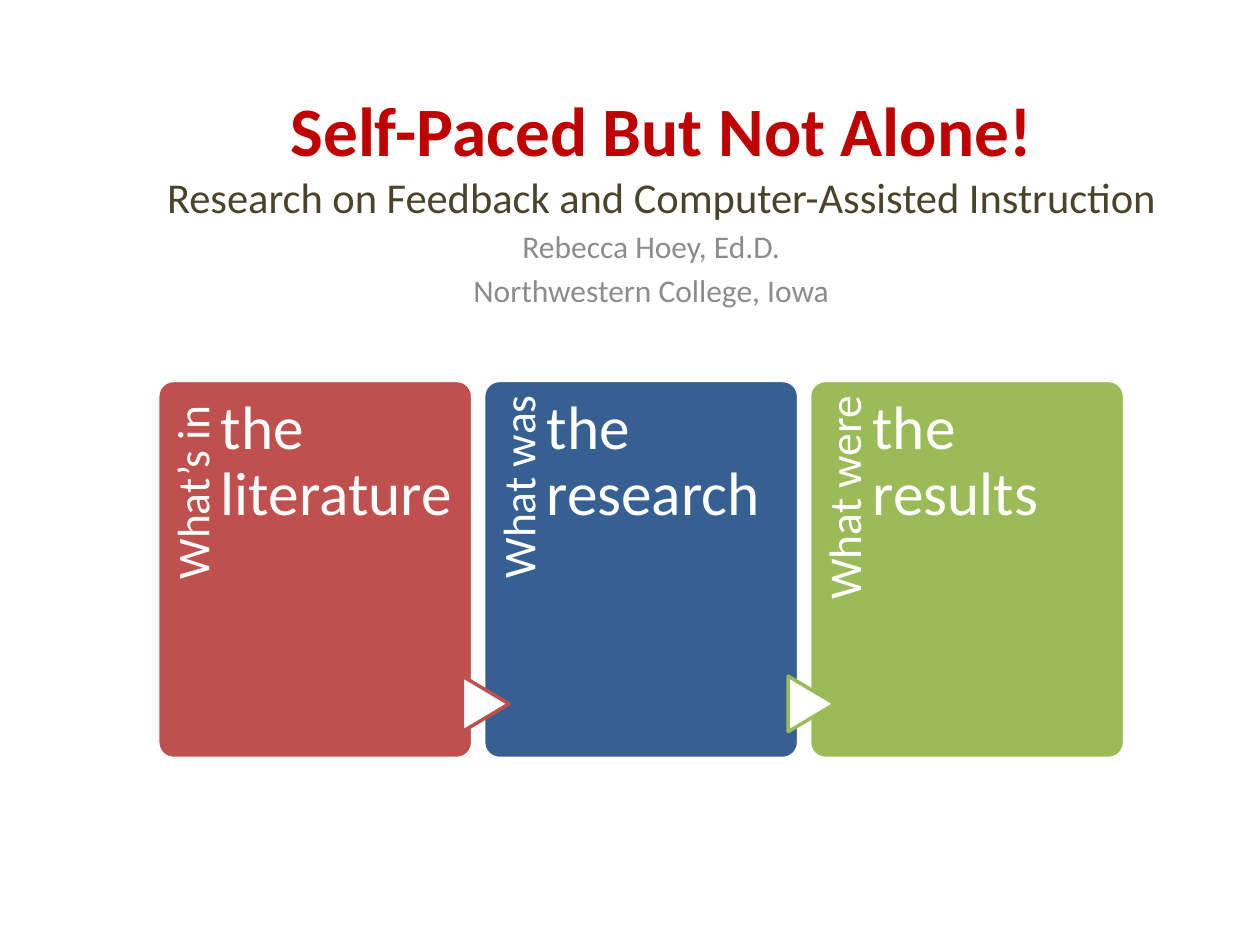
from pptx import Presentation
from pptx import util as u
from pptx.dml.color import RGBColor
from pptx.enum import shapes, text

Cm, Pt = u.Cm, u.Pt
KIND, ALIGN = shapes.MSO_SHAPE, text.PP_ALIGN
WHITE = "FFFFFF"


def color(fmt, hue):
    """Set a solid fill or a font colour from a hex string."""
    target = fmt.fore_color if hasattr(fmt, "fore_color") else fmt.color
    target.rgb = RGBColor.from_string(hue)


def assign(item, form):
    for name, value in form.items():
        setattr(item, name, value)


def shape(slide, kind, box, fill, edge):
    item = slide.shapes.add_shape(kind, *map(Cm, box))
    item.shadow.inherit = False
    item.fill.solid()
    color(item.fill, fill)
    item.line.fill.solid()
    color(item.line.fill, edge)
    item.line.width = Pt(2)
    return item


def textbox(slide, box, paras, frame, para):
    """Each paragraph is a list of (words, size, hue, bold) runs."""
    item = slide.shapes.add_textbox(*map(Cm, box))
    body = item.text_frame
    assign(body, {"word_wrap": True, **frame})
    for i, runs in enumerate(paras):
        line = body.add_paragraph() if i else body.paragraphs[0]
        assign(line, para)
        for j, (words, size, hue, bold) in enumerate(runs):
            if j:
                line.add_line_break()
            run = line.add_run()
            run.text = words
            assign(run.font, {"name": "Calibri", "size": Pt(size), "bold": bold})
            color(run.font, hue)
    return item


def header(slide, left, top):
    # Title with its subject line
    textbox(slide, (left, top, 21.59, 4.09),
            [[("Self-Paced But Not Alone!", 39.6, "C00000", True),
              ("Research on Feedback and Computer-Assisted Instruction",
               24.3, "4A452A", False)]],
            {"vertical_anchor": text.MSO_ANCHOR.MIDDLE},
            {"alignment": ALIGN.CENTER})
    # Author and school
    names = ["Rebecca Hoey, Ed.D.", "Northwestern College, Iowa"]
    textbox(slide, (left + 1.7, top + 3.38, 17.78, 2.54),
            [[(name, 18, "8C8C8C", False)] for name in names], {},
            {"alignment": ALIGN.CENTER, "space_before": Pt(3.6)})


def card(slide, left, top, label, topic, hue, prior):
    """One panel; prior is the hue of the panel that points to it."""
    panel = shape(slide, KIND.ROUNDED_RECTANGLE, (left, top, 6.35, 7.62), hue, WHITE)
    panel.adjustments[0] = 0.05
    para = {"line_spacing": 0.9}
    flush = {"margin_left": 0, "margin_right": 0, "margin_bottom": 0}

    # Label turned to read upwards
    side = textbox(slide, (left - 2.49, top + 2.46, 6.25, 1.27),
                   [[(label, 26, WHITE, False)]],
                   {**flush, "margin_top": Cm(0.25), "margin_right": Cm(0.33)},
                   {**para, "alignment": ALIGN.RIGHT, "space_after": Pt(9.1)})
    side.rotation = 270

    # Arrow from the panel before
    if prior:
        arrow = shape(slide, KIND.FLOWCHART_EXTRACT,
                      (left - 0.52, top + 6.05, 1.12, 0.94), WHITE, prior)
        arrow.rotation = 90

    # Topic
    textbox(slide, (left + 1.27, top, 4.72, 7.62),
            [[(topic, 35, WHITE, False)]],
            {**flush, "margin_top": Cm(0.33)},
            {**para, "space_after": Pt(12.25)})


def cards(slide, left, top, pitch=6.57):
    items = [("What’s in ", "the literature", "C0504D"),
             ("What was", "the research", "376092"),
             ("What were", "the results", "9BBB59")]
    # The first arrow takes the hue of panel 1, the second that of panel 3
    arrows = [None, items[0][2], items[2][2]]
    for i, (item, prior) in enumerate(zip(items, arrows)):
        card(slide, left + i * pitch, top, *item, prior)


def main():
    deck = Presentation()
    deck.slide_width, deck.slide_height = Cm(25.4), Cm(19.05)
    slide = deck.slides.add_slide(deck.slide_layouts[6])
    header(slide, 2.54, 1.07)
    cards(slide, 3.18, 7.67)
    deck.save("out.pptx")


if __name__ == "__main__":
    main()
